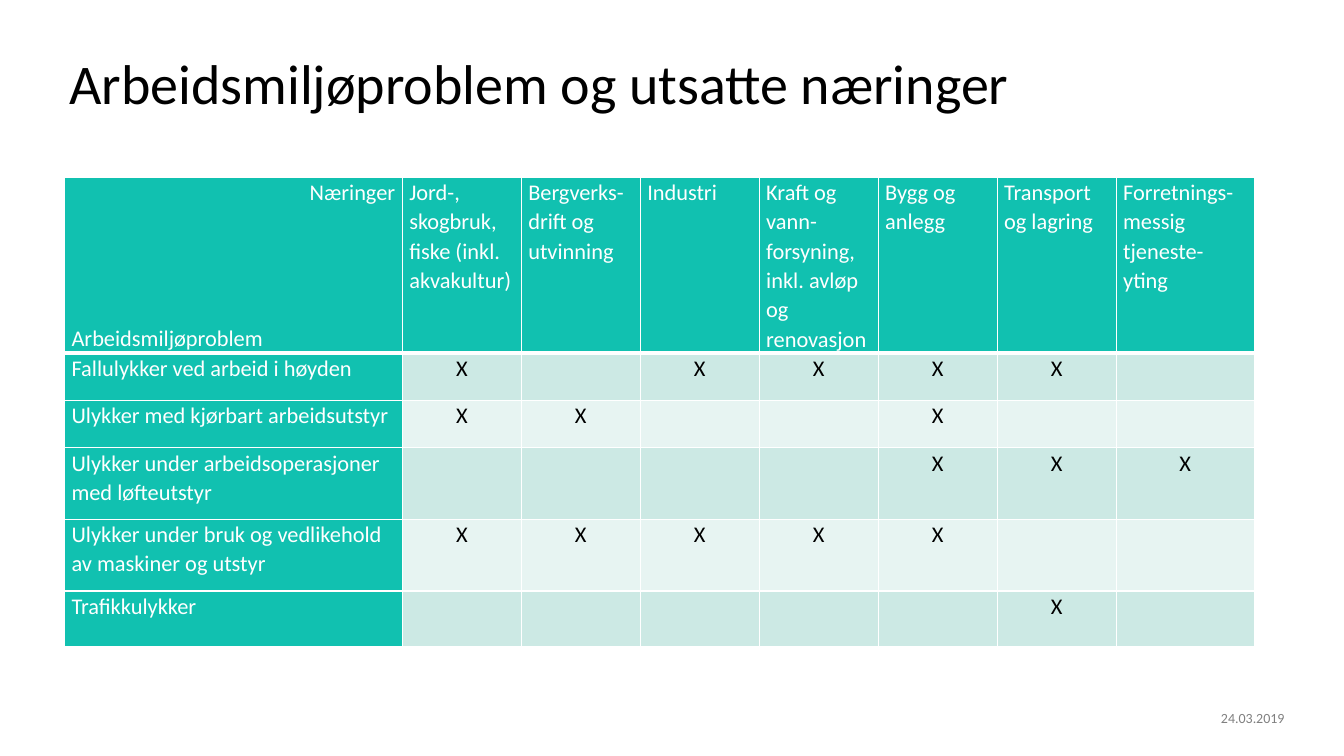
from typing import NamedTuple

from lxml.etree import SubElement
from pptx import Presentation
from pptx.dml.color import RGBColor
from pptx.enum.text import PP_ALIGN
from pptx.oxml.ns import qn
from pptx.util import Inches, Pt

TEAL, WHITE, BLACK, GREY = "11C1B0", "FFFFFF", "000000", "808080"
BANDS = ("CCE9E4", "E7F4F2")
WIDTHS = [3.35] + [1.18] * 6 + [1.37]


class Hazard(NamedTuple):
    name: str
    marks: str
    height: float


class Label(NamedTuple):
    text: str
    left: float
    top: float
    width: float
    height: float
    size: int
    color: str
    align: PP_ALIGN
    inset: tuple[float, float]
    spacing: float


TRADES = [
    "Jord-, skogbruk, fiske (inkl. akvakultur)",
    "Bergverks-drift og utvinning",
    "Industri",
    "Kraft og vann-forsyning, inkl. avløp og renovasjon",
    "Bygg og anlegg",
    "Transport og lagring",
    "Forretnings-messig tjeneste-yting",
]
HAZARDS = [
    Hazard("Fallulykker ved arbeid i høyden", "X-XXXX-", 0.47),
    Hazard("Ulykker med kjørbart arbeidsutstyr", "XX--X--", 0.47),
    Hazard("Ulykker under arbeidsoperasjoner med løfteutstyr", "----XXX", 0.71),
    Hazard("Ulykker under bruk og vedlikehold av maskiner og utstyr", "XXXXX--", 0.71),
    Hazard("Trafikkulykker", "-----X-", 0.55),
]
LABELS = [
    Label("Arbeidsmiljøproblem og utsatte næringer", 0.59, 0.51, 12.15, 0.61,
          40, BLACK, PP_ALIGN.LEFT, (0.1, 0.05), 0.9),
    Label("24.03.2019", 11.17, 7.04, 1.57, 0.17,
          10, GREY, PP_ALIGN.RIGHT, (0, 0), 1.0),
]


def rgb(color: str) -> RGBColor:
    return RGBColor.from_string(color)


def style(para, size: int, color: str, align: PP_ALIGN, spacing: float) -> None:
    para.alignment = align
    para.line_spacing = spacing
    para.font.name = "Calibri"
    para.font.size = Pt(size)
    para.font.bold = False
    para.font.color.rgb = rgb(color)


def inset(box, side: float, edge: float) -> None:
    box.margin_left = box.margin_right = Inches(side)
    box.margin_top = box.margin_bottom = Inches(edge)


def add_label(slide, label: Label) -> None:
    box = slide.shapes.add_textbox(Inches(label.left), Inches(label.top),
                                   Inches(label.width), Inches(label.height))
    frame = box.text_frame
    frame.word_wrap = True
    inset(frame, *label.inset)
    frame.text = label.text
    style(frame.paragraphs[0], label.size, label.color, label.align, label.spacing)


def set_edges(cell, top: int, bottom: int) -> None:
    props = cell._tc.get_or_add_tcPr()
    for side, width in (("L", 1), ("R", 1), ("T", top), ("B", bottom)):
        line = SubElement(props, qn(f"a:ln{side}"), w=str(Pt(width)))
        fill = SubElement(line, qn("a:solidFill"))
        SubElement(fill, qn("a:srgbClr"), val=WHITE)


def fill_cell(cell, row: int, col: int, text: str) -> None:
    head = row == 0 or col == 0
    set_edges(cell, 3 if row == 1 else 1, 3 if row == 0 else 1)
    cell.fill.solid()
    cell.fill.fore_color.rgb = rgb(TEAL if head else BANDS[(row - 1) % 2])
    inset(cell, 0.07, 0)
    cell.text = text
    for para in cell.text_frame.paragraphs:
        style(para, 16, WHITE if head else BLACK,
              PP_ALIGN.LEFT if head else PP_ALIGN.CENTER, 1.07)


def add_matrix(slide) -> None:
    rows = [["Næringer\nArbeidsmiljøproblem", *TRADES]]
    rows += [[item.name, *item.marks.replace("-", " ")] for item in HAZARDS]
    heights = [1.74] + [item.height for item in HAZARDS]
    table = slide.shapes.add_table(
        len(rows), len(WIDTHS), Inches(0.64), Inches(1.76),
        Inches(sum(WIDTHS)), Inches(sum(heights))).table
    for column, width in zip(table.columns, WIDTHS):
        column.width = Inches(width)
    for row, texts in enumerate(rows):
        table.rows[row].height = Inches(heights[row])
        for col, text in enumerate(texts):
            fill_cell(table.cell(row, col), row, col, text.strip())
    first, last = table.cell(0, 0).text_frame.paragraphs
    first.alignment = PP_ALIGN.RIGHT
    last.space_before = Pt(83)


def main() -> None:
    deck = Presentation()
    deck.slide_width, deck.slide_height = Inches(13.33), Inches(7.5)
    slide = deck.slides.add_slide(deck.slide_layouts[6])
    add_matrix(slide)
    for label in LABELS:
        add_label(slide, label)
    deck.save("out.pptx")


if __name__ == "__main__":
    main()
